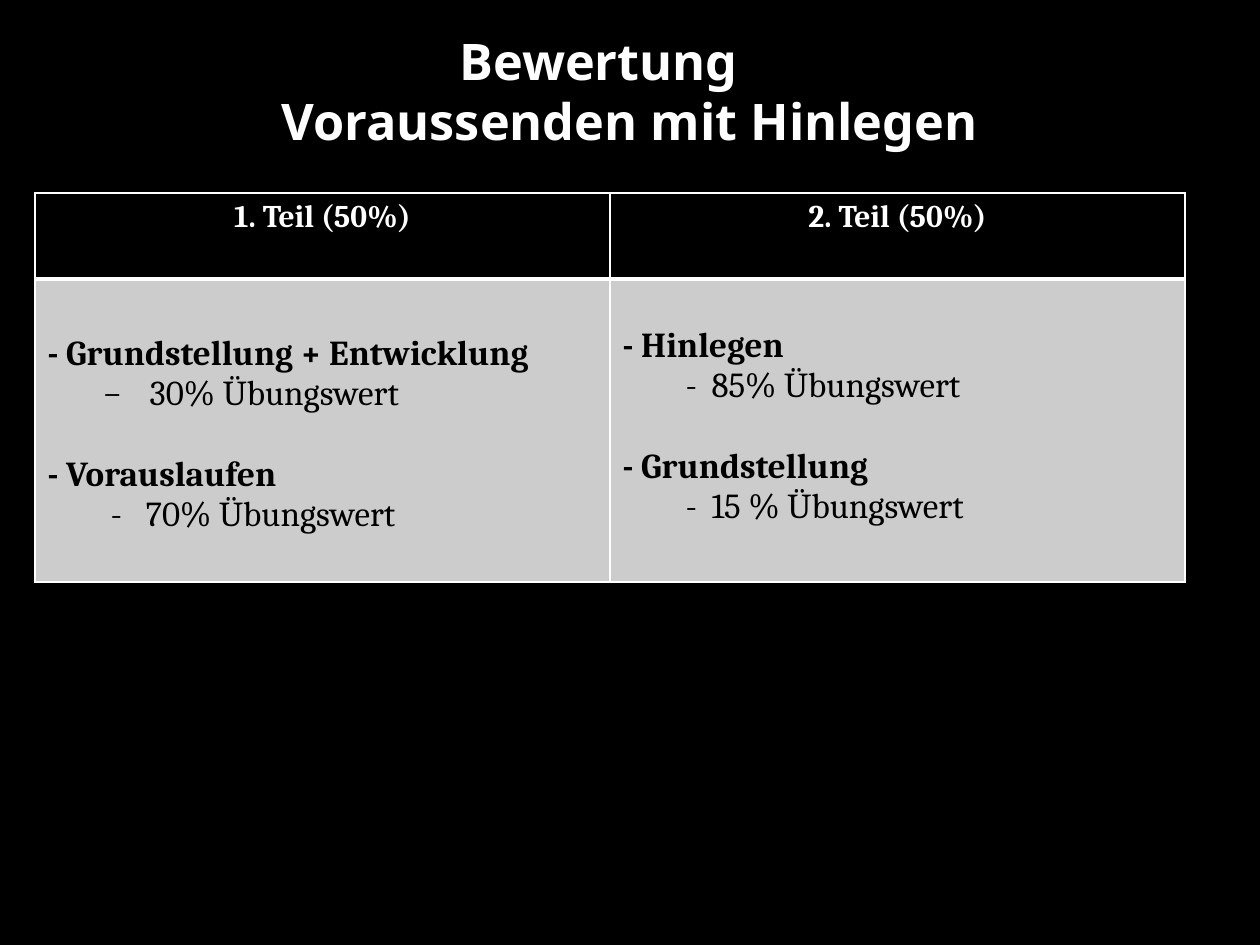
from lxml import etree
from pptx import Presentation
from pptx import util as u
from pptx.dml.color import RGBColor
from pptx.enum import text
from pptx.oxml.ns import qn

BLACK = RGBColor(0x00, 0x00, 0x00)
WHITE = RGBColor(0xFF, 0xFF, 0xFF)
GREY = RGBColor(0xCC, 0xCC, 0xCC)

HEADERS = ["1. Teil (50%)", "2. Teil (50%)"]
# Per column: top margin in px, then (topic, bullet, text start, bullet width, value)
RATINGS = [
    (55, [("- Grundstellung + Entwicklung", "−", 102, 47, "30% Übungswert"),
          ("- Vorauslaufen", "-", 98, 35, "70% Übungswert")]),
    (47, [("- Hinlegen", "-", 89, 26, "85% Übungswert"),
          ("- Grundstellung", "-", 89, 26, "15 % Übungswert")]),
]


def px(n):
    return u.Emu(round(n * 914400 / 126))


class SlideBuilder:
    heading_font = "Noto Sans"
    body_font = "Cambria"

    def __init__(self, prs):
        self.s = prs.slides.add_slide(prs.slide_layouts[6])
        self.s.background.fill.solid()
        self.s.background.fill.fore_color.rgb = BLACK

    def set_text(self, p, words, size, color, font, bold=True):
        p.text = words
        for r in p.runs:
            r.font.name = font
            r.font.size = u.Pt(size)
            r.font.bold = bold
            r.font.color.rgb = color

    def title(self, x, y, w, h, lines, shift):
        """Centre the lines; every line after the first starts further right."""
        tf = self.s.shapes.add_textbox(px(x), px(y), px(w), px(h)).text_frame
        tf.word_wrap = True
        tf.margin_top = tf.margin_bottom = 0
        tf.margin_right = px(13 + shift)
        for i, line in enumerate(lines):
            p = tf.add_paragraph() if i else tf.paragraphs[0]
            self.set_text(p, line, 28.8, WHITE, self.heading_font)
            p.alignment = text.PP_ALIGN.CENTER
            p.line_spacing = px(60)
            if i:
                p._p.get_or_add_pPr().set("marL", str(px(shift)))

    def table(self, x, y, col_widths, row_heights):
        frame = self.s.shapes.add_table(
            len(row_heights), len(col_widths), px(x), px(y),
            px(sum(col_widths)), px(sum(row_heights)))
        for col, w in zip(frame.table.columns, col_widths):
            col.width = px(w)
        for row, h in zip(frame.table.rows, row_heights):
            row.height = px(h)
        return frame.table

    def cell_style(self, cell, fill, top=1, bottom=1):
        tcPr = cell._tc.get_or_add_tcPr()
        for side, width in zip("LRTB", (1, 1, top, bottom)):
            ln = etree.SubElement(tcPr, qn("a:ln" + side), w=str(u.Pt(width)))
            paint = etree.SubElement(ln, qn("a:solidFill"))
            etree.SubElement(paint, qn("a:srgbClr"), val=str(WHITE))
        cell.fill.solid()
        cell.fill.fore_color.rgb = fill

    def header_cell(self, cell, words):
        self.cell_style(cell, BLACK, bottom=3)
        p = cell.text_frame.paragraphs[0]
        self.set_text(p, words, 18, WHITE, self.body_font)
        p.alignment = text.PP_ALIGN.CENTER

    def rating_cell(self, cell, top, ratings):
        self.cell_style(cell, GREY, top=3)
        cell.margin_top = px(top)
        tf = cell.text_frame
        for i, (topic, mark, start, hang, value) in enumerate(ratings):
            p = tf.add_paragraph() if i else tf.paragraphs[0]
            self.set_text(p, topic, 20, BLACK, self.body_font)
            if i:
                p.space_before = px(40)
            p = tf.add_paragraph()
            self.set_text(p, value, 20, BLACK, self.body_font, bold=False)
            self.bullet(p, mark, start, hang)

    def bullet(self, p, mark, start, hang):
        pPr = p._p.get_or_add_pPr()
        pPr.set("marL", str(px(start)))
        pPr.set("indent", str(-px(hang)))
        etree.SubElement(pPr, qn("a:buFont"), typeface=self.body_font)
        etree.SubElement(pPr, qn("a:buChar"), char=mark)


def main():
    prs = Presentation()
    prs.slide_width, prs.slide_height = px(1260), px(945)
    slide = SlideBuilder(prs)
    slide.title(63, 31, 1134, 157, ["Bewertung", "Voraussenden mit Hinlegen"], 62)
    table = slide.table(35, 193, [575, 575], [86, 303])
    for col, (header, (top, ratings)) in enumerate(zip(HEADERS, RATINGS)):
        slide.header_cell(table.cell(0, col), header)
        slide.rating_cell(table.cell(1, col), top, ratings)
    prs.save("out.pptx")


if __name__ == "__main__":
    main()
